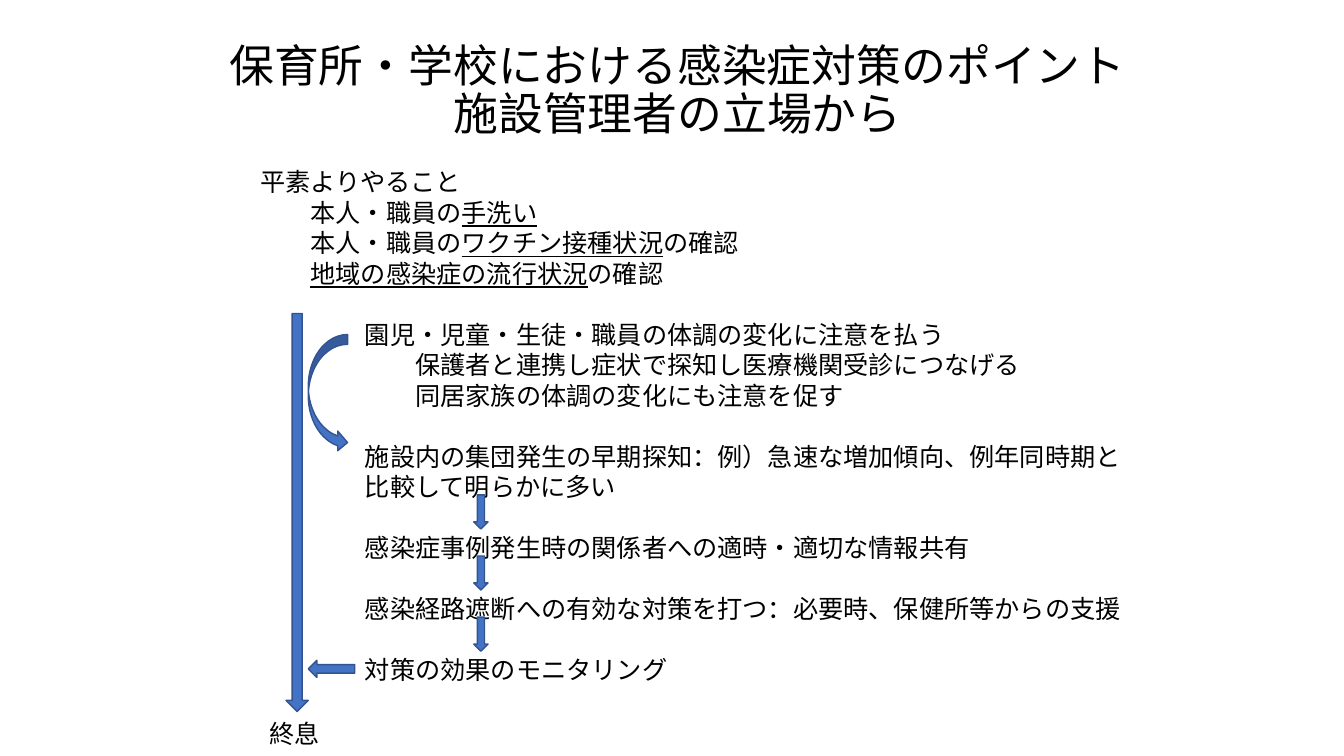
from dataclasses import dataclass

from lxml import etree
from pptx import Presentation
from pptx.dml.color import RGBColor
from pptx.enum.shapes import MSO_SHAPE
from pptx.enum.text import MSO_ANCHOR, MSO_AUTO_SIZE, PP_ALIGN
from pptx.oxml.ns import qn
from pptx.util import Cm, Pt

DOWN, LEFT = MSO_SHAPE.DOWN_ARROW, MSO_SHAPE.LEFT_ARROW
CURVED = MSO_SHAPE.CURVED_RIGHT_ARROW
TOP, MIDDLE = MSO_ANCHOR.TOP, MSO_ANCHOR.MIDDLE
CENTER, ALIGN_LEFT = PP_ALIGN.CENTER, PP_ALIGN.LEFT
NO_FIT = MSO_AUTO_SIZE.NONE
TWO_CONTENT = 3

# Content: (level, gap before, [(text, underlined), ...])
TITLE = "保育所・学校における感染症対策のポイント\v施設管理者の立場から"
ROUTINE = [
    (0, False, [("平素よりやること", False)]),
    (1, False, [("本人・職員の", False), ("手洗い", True)]),
    (1, False, [("本人・職員の", False), ("ワクチン接種状況", True), ("の確認", False)]),
    (1, False, [("地域の感染症の流行状況", True), ("の確認", False)]),
]
STEPS = [
    (0, False, [("園児・児童・生徒・職員の体調の変化に注意を払う", False)]),
    (1, False, [("保護者と連携し症状で探知し医療機関受診につなげる", False)]),
    (1, False, [("同居家族の体調の変化にも注意を促す", False)]),
    (0, True, [("施設内の集団発生の早期探知：例）急速な増加傾向、例年同時期と比較して明らかに多い", False)]),
    (0, True, [("感染症事例発生時の関係者への適時・適切な情報共有", False)]),
    (0, True, [("感染経路遮断への有効な対策を打つ：必要時、保健所等からの支援", False)]),
    (0, True, [("対策の効果のモニタリング", False)]),
]
END = [(0, False, [("終息", False)])]


@dataclass(frozen=True)
class Theme:
    font: str = "Noto Sans CJK JP"
    text: RGBColor = RGBColor(0, 0, 0)
    fill: RGBColor = RGBColor(0x44, 0x72, 0xC4)
    line: RGBColor = RGBColor(0x32, 0x54, 0x91)
    title_size: Pt = Pt(32)
    title_pitch: Pt = Pt(34.3)
    body_size: Pt = Pt(18)
    body_pitch: Pt = Pt(21.8)


THEME = Theme()
INDENT = Cm(1.27)


def place(s, left, top, width, height):
    s.left, s.top, s.width, s.height = Cm(left), Cm(top), Cm(width), Cm(height)


def style_run(r, size):
    r.font.name, r.font.size = THEME.font, size
    r.font.color.rgb = THEME.text
    ea = etree.SubElement(r._r.get_or_add_rPr(), qn("a:ea"))
    ea.set("typeface", THEME.font)


def fill_list(tf, items):
    tf.auto_size, tf.vertical_anchor = NO_FIT, TOP
    for i, (level, gap, parts) in enumerate(items):
        p = tf.paragraphs[0] if i == 0 else tf.add_paragraph()
        p.level, p.alignment = level, ALIGN_LEFT
        p.line_spacing = THEME.body_pitch
        p.space_before = THEME.body_pitch if gap else Pt(0)
        p.space_after = Pt(0)
        pPr = p._p.get_or_add_pPr()
        pPr.set("marL", str(level * INDENT))
        pPr.set("indent", "0")
        etree.SubElement(pPr, qn("a:buNone"))
        for text, underlined in parts:
            r = p.add_run()
            r.text = text
            style_run(r, THEME.body_size)
            if underlined:
                r.font.underline = True


def add_arrow(slide, kind, *box):
    s = slide.shapes.add_shape(kind, *map(Cm, box))
    s.shadow.inherit = False
    s.fill.solid()
    s.fill.fore_color.rgb = THEME.fill
    s.line.color.rgb, s.line.width = THEME.line, Pt(1)
    return s


def main():
    prs = Presentation()
    prs.slide_width, prs.slide_height = Cm(33.87), Cm(19.05)
    slide = prs.slides.add_slide(prs.slide_layouts[TWO_CONTENT])
    title, routine, steps = list(slide.placeholders)[:3]
    for extra in list(slide.placeholders)[3:]:
        extra._element.getparent().remove(extra._element)

    # Title
    place(title, 5.08, 0.81, 24, 2.97)
    tf = title.text_frame
    tf.text = TITLE
    tf.auto_size, tf.vertical_anchor = NO_FIT, MIDDLE
    p = tf.paragraphs[0]
    p.alignment, p.line_spacing = CENTER, THEME.title_pitch
    for r in p.runs:
        style_run(r, THEME.title_size)

    # Routine measures and response steps
    place(routine, 6.3, 4.06, 22.76, 3.33)
    fill_list(routine.text_frame, ROUTINE)
    place(steps, 8.94, 7.9, 19.84, 9.5)
    fill_list(steps.text_frame, STEPS)

    # Timeline down to the end of the outbreak
    timeline = add_arrow(slide, DOWN, 7.21, 7.9, 0.56, 10.03)
    timeline.adjustments[0] = 0.447
    end = slide.shapes.add_textbox(Cm(6.55), Cm(17.96), Cm(1.8), Cm(1.02))
    end.text_frame.word_wrap = False
    fill_list(end.text_frame, END)

    # Arrows between the steps
    add_arrow(slide, CURVED, 7.77, 8.43, 0.99, 2.97)
    add_arrow(slide, LEFT, 7.77, 16.64, 1.17, 0.43)
    for i in range(3):
        add_arrow(slide, DOWN, 11.94, 12.47 + i * 1.54, 0.36, 0.86)

    prs.save("out.pptx")


if __name__ == "__main__":
    main()
